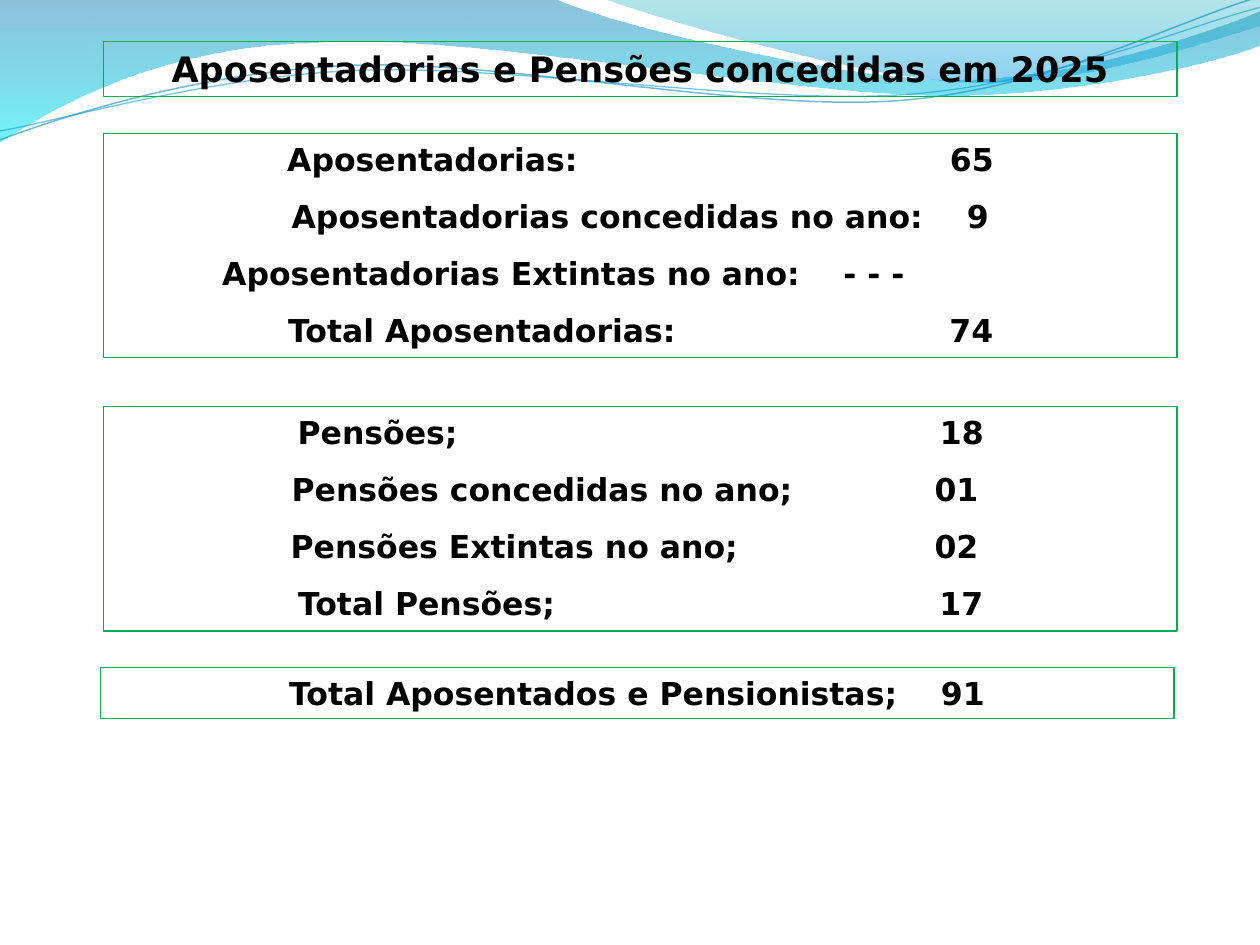
import pptx
import pptx.dml.color
import pptx.enum.text
import pptx.oxml
import pptx.oxml.ns
import pptx.util
from lxml import etree

Cm = pptx.util.Cm
Pt = pptx.util.Pt
RGB = pptx.dml.color.RGBColor
qn = pptx.oxml.ns.qn

BLACK = RGB(0, 0, 0)
GREEN = RGB(0x00, 0xB0, 0x50)
BLUE = RGB(0x00, 0x79, 0xAF)
CYAN = RGB(0x00, 0xEB, 0xF8)
TEAL = RGB(0x00, 0xAD, 0xB6)
SKY = RGB(0x00, 0x9B, 0xE5)
DEEP = RGB(0x00, 0x8A, 0xBF)
AZURE = RGB(0x00, 0x9D, 0xD9)

FONT = "DejaVu Sans"
LEFT, WIDTH = 2.09, 21.64
INSET = 0.25

# Each row: label, value, and where both start, in cm from the slide's edge.
RETIRED = [
    ("Aposentadorias:", "65", 5.79, 19.15),
    ("Aposentadorias concedidas no ano:", "9", 5.88, 19.49),
    ("Aposentadorias Extintas no ano:", "- - -", 4.48, 17.0),
    ("Total Aposentadorias:", "74", 5.81, 19.14),
]
PENSIONS = [
    ("Pensões;", "18", 6.0, 18.95),
    ("Pensões concedidas no ano;", "01", 5.88, 18.84),
    ("Pensões Extintas no ano;", "02", 5.86, 18.84),
    ("Total Pensões;", "17", 6.01, 18.94),
]
TOTAL = [("Total Aposentados e Pensionistas;", "91", 5.83, 18.97)]

# Waves in cm: a start, then line ends (2 numbers) or Bézier curves (6 numbers).
BAND = [
    (0, 0), (11.18, -0.02),
    (12.09, 0.43, 16.87, 1.6, 19.25, 1.6),
    (21.67, 1.6, 24.33, 0.66, 25.4, 0.23),
    (25.4, 0.91),
    (24.97, 1.12, 22.1, 1.93, 18.95, 1.93),
    (15.8, 1.91, 9.7, 0.71, 6.53, 0.86),
    (3.28, 0.91, 1.17, 2.11, -0.02, 2.87),
]
CREST = [
    (12.17, -0.02),
    (12.93, 0.28, 17.32, 1.57, 19.53, 1.65),
    (21.74, 1.75, 24.41, 0.81, 25.4, 0.53),
    (25.4, 0),
]
UPPER = [
    (0, 2.82),
    (1.22, 2.36, 4.01, 1.45, 7.04, 1.32),
    (10.03, 1.19, 15.06, 2.26, 18.11, 2.03),
    (21.16, 1.8, 23.83, 0.38, 25.35, -0.05),
]
LOWER = [
    (0, 2.64),
    (1.19, 2.44, 4.17, 1.55, 7.19, 1.42),
    (10.24, 1.3, 15.16, 2.11, 18.21, 1.91),
    (21.23, 1.7, 23.9, 0.53, 25.4, 0.15),
]


def fade(shape, levels):
    """Give the shape's colours, in order, these opacities in percent."""
    tones = shape.element.spPr.iter(qn("a:srgbClr"))
    for tone, level in zip(tones, levels):
        etree.SubElement(tone, qn("a:alpha"), val=str(level * 1000))


def bend(shape, path):
    """Turn the outline's straight segments into the path's curves."""
    track = next(shape.element.spPr.iter(qn("a:path")))
    for node, seg in zip(list(track), path):
        if len(seg) != 6:
            continue
        curve = etree.Element(qn("a:cubicBezTo"))
        for x, y in zip(seg[::2], seg[1::2]):
            etree.SubElement(curve, qn("a:pt"), x=str(Cm(x) - shape.left),
                             y=str(Cm(y) - shape.top))
        track.replace(node, curve)


def add_path(slide, path, close):
    ends = [(Cm(seg[-2]), Cm(seg[-1])) for seg in path]
    pen = slide.shapes.build_freeform(*ends[0])
    pen.add_line_segments(ends[1:], close=close)
    shape = pen.convert_to_shape()
    shape.shadow.inherit = False
    bend(shape, path)
    return shape


def add_wave(slide, path, tones, levels):
    shape = add_path(slide, path, True)
    shape.line.fill.background()
    shape.fill.gradient()
    shape.fill.gradient_angle = 270
    for stop, tone in zip(shape.fill.gradient_stops, tones):
        stop.color.rgb = tone
    fade(shape, levels)


def add_curve(slide, path, tone, width):
    shape = add_path(slide, path, False)
    shape.fill.background()
    shape.line.color.rgb = tone
    shape.line.width = Pt(width)
    fade(shape, [56])


def write(para, text, size=18, align="LEFT", before=0, tabs=()):
    para.alignment = getattr(pptx.enum.text.PP_ALIGN, align)
    para.space_before = Pt(before)
    if tabs:
        stops = etree.SubElement(para._p.get_or_add_pPr(), qn("a:tabLst"))
        for tab in tabs:
            etree.SubElement(stops, qn("a:tab"), pos=str(Cm(tab)), algn="l")
    run = para.add_run()
    run.text = text
    run.font.name = FONT
    run.font.size = Pt(size)
    run.font.bold = True
    run.font.color.rgb = BLACK


def frame(shape, anchor="TOP"):
    shape.line.color.rgb = GREEN
    shape.line.width = Pt(0.75)
    text = shape.text_frame
    text.word_wrap = True
    text.auto_size = pptx.enum.text.MSO_AUTO_SIZE.NONE
    text.vertical_anchor = getattr(pptx.enum.text.MSO_ANCHOR, anchor)
    return text


def add_title(slide, text):
    title = slide.shapes.title
    title.left, title.top = Cm(LEFT), Cm(0.83)
    title.width, title.height = Cm(WIDTH), Cm(1.12)
    para = frame(title, anchor="MIDDLE").paragraphs[0]
    write(para, text, size=20, align="CENTER")
    # Bring the title in front of the waves.
    title.element.getparent().append(title.element)


def add_list(slide, rows, top, height, left=LEFT):
    box = slide.shapes.add_textbox(Cm(left), Cm(top), Cm(WIDTH), Cm(height))
    text = frame(box)
    for num, (label, value, *starts) in enumerate(rows):
        para = text.add_paragraph() if num else text.paragraphs[0]
        write(para, f"\t{label}\t{value}", before=11 if num else 0,
              tabs=[start - left - INSET for start in starts])


def main():
    deck = pptx.Presentation()
    deck.slide_width, deck.slide_height = Cm(25.4), Cm(19.05)
    slide = deck.slides.add_slide(deck.slide_layouts[5])
    add_wave(slide, BAND, (BLUE, CYAN), (45, 55))
    add_wave(slide, CREST, (TEAL, SKY), (30, 45))
    add_curve(slide, UPPER, DEEP, 0.85)
    add_curve(slide, LOWER, AZURE, 0.75)
    add_title(slide, "Aposentadorias e Pensões concedidas em 2025")
    add_list(slide, RETIRED, 2.69, 4.52)
    add_list(slide, PENSIONS, 8.2, 4.52)
    add_list(slide, TOTAL, 13.46, 1.02, left=2.03)
    deck.save("out.pptx")


if __name__ == "__main__":
    main()
